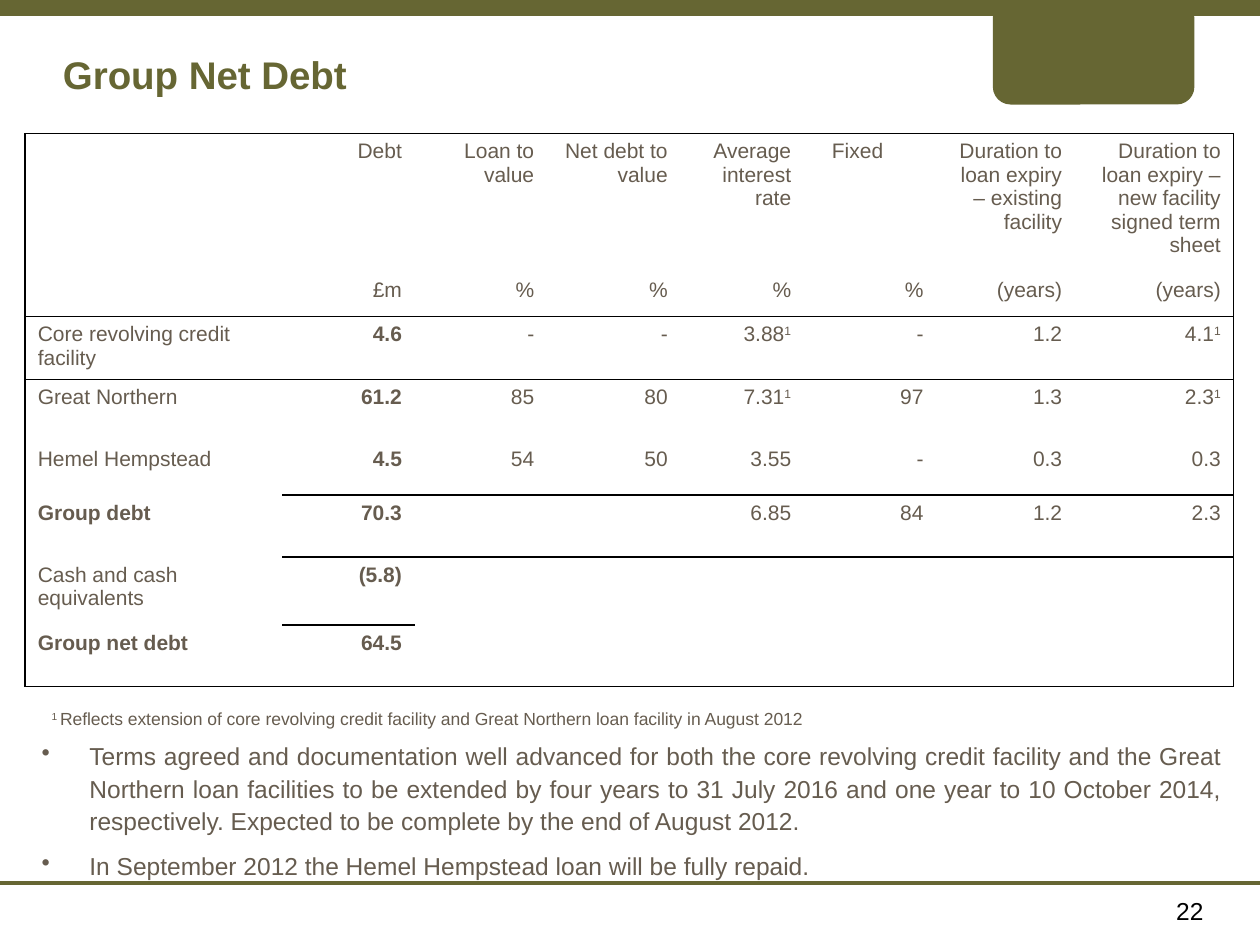
from lxml import etree
from pptx import Presentation
from pptx.dml.color import RGBColor
from pptx.enum.shapes import MSO_CONNECTOR as Link, MSO_SHAPE as Shape
from pptx.enum.text import MSO_ANCHOR as Anchor, PP_ALIGN as Align
from pptx.oxml.ns import qn
from pptx.util import Inches, Pt

rgb = RGBColor.from_string
OLIVE, TAUPE, BLACK = "666633", "665C4F", "000000"


def write(para, text, size, color=TAUPE, bold=False, align=Align.LEFT):
    para.alignment = align
    look = {"name": "Arial", "size": Pt(size), "bold": bold}
    for i, part in enumerate(text.split("^")):
        if not part:
            continue
        run = para.add_run()
        run.text = part
        for key, val in look.items():
            setattr(run.font, key, val)
        run.font.color.rgb = rgb(color)
        if i % 2:
            run.font._element.set("baseline", "30000")


def box(left, top, width, height, pads, anchor=Anchor.TOP):
    spot = [Inches(n) for n in (left, top, width, height)]
    frame = slide.shapes.add_textbox(*spot).text_frame
    frame.word_wrap = True
    frame.vertical_anchor = anchor
    for side, pad in zip(("left", "top", "right", "bottom"), pads):
        setattr(frame, f"margin_{side}", Inches(pad))
    return frame


deck = Presentation()
deck.slide_width, deck.slide_height = Inches(10), Inches(7.5)
slide = deck.slides.add_slide(deck.slide_layouts[6])

tab = slide.shapes.add_shape(
    Shape.ROUNDED_RECTANGLE, Inches(7.88), 0, Inches(1.6), Inches(0.83))
tab.adjustments[0] = 0.17
tab.shadow.inherit = False
tab.fill.solid()
tab.fill.fore_color.rgb = rgb(OLIVE)
tab.line.fill.background()

for y, weight in ((7.01, 2), (0.06, 10)):
    rule = slide.shapes.add_connector(
        Link.STRAIGHT, 0, Inches(y), Inches(10), Inches(y))
    rule.line.color.rgb = rgb(OLIVE)
    rule.line.width = Pt(weight)
    etree.SubElement(rule._element.spPr, qn("a:effectLst"))

page = box(8.3, 7.06, 1.35, 0.36, (0.1, 0.05, 0.1, 0.05))
write(page.paragraphs[0], "22", 14, BLACK, align=Align.RIGHT)
title = box(0.5, 0.3, 7.26, 0.58, (0, 0, 0.04, 0), Anchor.MIDDLE)
write(title.paragraphs[0], "Group Net Debt", 22, OLIVE, True)

data = [
    ["", "Debt", "Loan to value", "Net debt to value",
     "Average interest rate", "Fixed",
     "Duration to loan expiry – existing facility",
     "Duration to loan expiry – new facility signed term sheet"],
    ["", "£m", "%", "%", "%", "%", "(years)", "(years)"],
    ["Core revolving credit facility", "4.6", "-", "-", "3.88^1", "-",
     "1.2", "4.1^1"],
    ["Great Northern", "61.2", "85", "80", "7.31^1", "97", "1.3", "2.3^1"],
    ["Hemel Hempstead", "4.5", "54", "50", "3.55", "-", "0.3", "0.3"],
    ["Group debt", "70.3", "", "", "6.85", "84", "1.2", "2.3"],
    ["Cash and cash equivalents", "(5.8)"] + [""] * 6,
    ["Group net debt", "64.5"] + [""] * 6,
]
wide = [2.04, 1.05, 1.05, 1.06, 0.98, 1.05, 1.1, 1.26]
tall = [1.03, 0.35, 0.49, 0.49, 0.43, 0.49, 0.54, 0.49]
under = {1: range(8), 4: range(1, 8), 6: [1], 7: range(8)}

grid = slide.shapes.add_table(
    8, 8, Inches(0.2), Inches(1.06), Inches(sum(wide)),
    Inches(sum(tall))).table
grid.first_row = grid.horz_banding = False
style = grid._tbl.tblPr.find(qn("a:tableStyleId"))
style.text = "{2D5ABB26-0587-4C30-8999-92F81FD0307C}"
for col, size in zip(grid.columns, wide):
    col.width = Inches(size)
for row, size in zip(grid.rows, tall):
    row.height = Inches(size)

for r, line in enumerate(data):
    for c, text in enumerate(line):
        cell = grid.cell(r, c)
        para = cell.text_frame.paragraphs[0]
        bold = r > 1 and (c == 1 or (c == 0 and r in (5, 7)))
        write(para, text, 12, bold=bold,
              align=Align.RIGHT if c else Align.LEFT)
        if not text:
            etree.SubElement(para._p, qn("a:endParaRPr"), sz="1200")
        edges = {
            "L": c == 0,
            "R": c == 7,
            "T": r == 0 or c in under.get(r - 1, []),
            "B": c in under.get(r, []),
        }
        props = cell._tc.get_or_add_tcPr()
        for side, drawn in edges.items():
            if drawn:
                edge = etree.SubElement(props, qn(f"a:ln{side}"), w="12700")
                fill = etree.SubElement(edge, qn("a:solidFill"))
                etree.SubElement(fill, qn("a:srgbClr"), val=BLACK)
        cell.fill.background()
grid.cell(0, 5).margin_right = Inches(0.42)

notes = [
    "Terms agreed and documentation well advanced for both the core "
    "revolving credit facility and the Great Northern loan facilities to be "
    "extended by four years to 31 July 2016 and one year to 10 October 2014, "
    "respectively. Expected to be complete by the end of August 2012.",
    "In September 2012 the Hemel Hempstead loan will be fully repaid.",
]
body = box(0.27, 5.8, 9.53, 1.19, (0.06, 0.06, 0.1, 0.06))
for i, text in enumerate(notes):
    para = body.add_paragraph() if i else body.paragraphs[0]
    para.line_spacing = 1.1
    if i:
        para.space_before = Pt(7)
    props = para._p.get_or_add_pPr()
    props.set("marL", str(Inches(0.38)))
    props.set("indent", str(Inches(-0.38)))
    etree.SubElement(props, qn("a:buChar"), char="•")
    write(para, text, 14, align=Align.JUSTIFY)

foot = box(-0.03, 5.47, 9.37, 0.41, (0.44, 0.14, 0.1, 0.06))
foot.paragraphs[0].line_spacing = 1.1
write(foot.paragraphs[0],
      "^1 ^Reflects extension of core revolving credit facility and Great "
      "Northern loan facility in August 2012", 10, align=Align.JUSTIFY)

deck.save("out.pptx")
